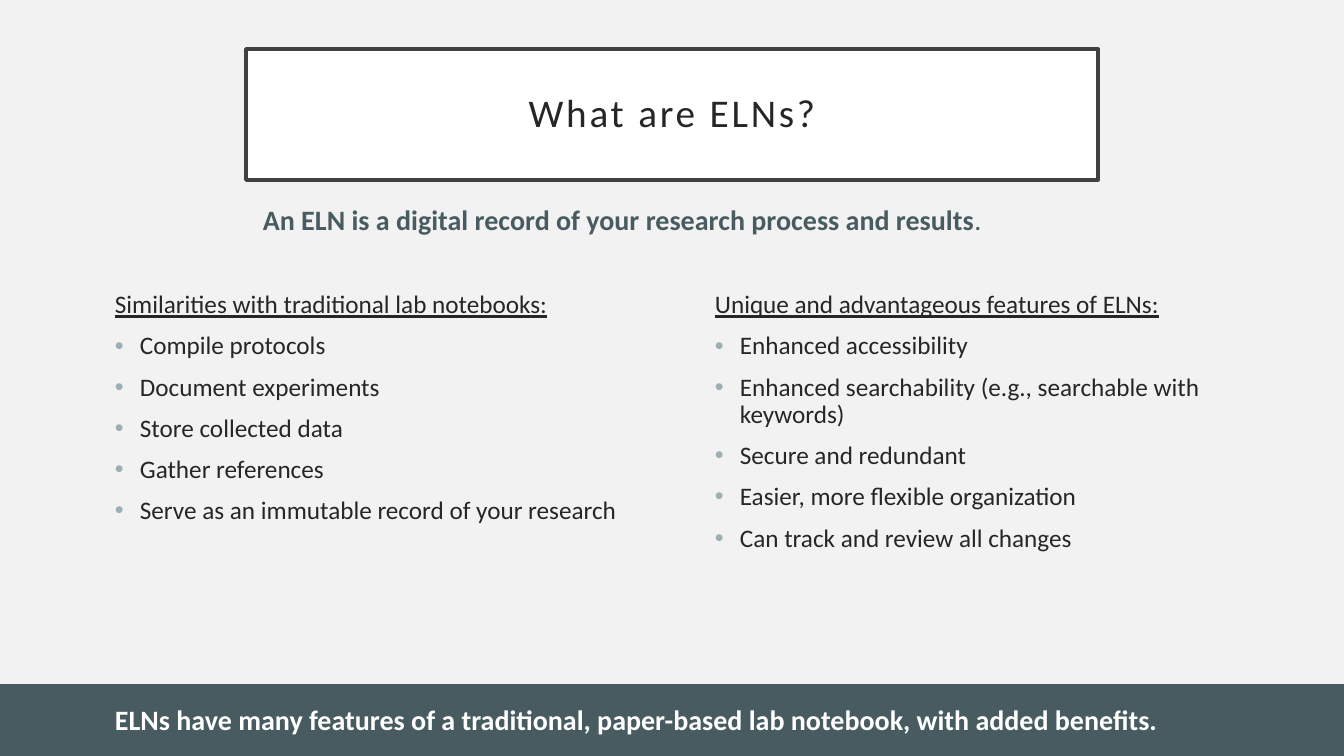
from pptx import Presentation
from pptx.dml.color import RGBColor
from pptx.enum.shapes import MSO_SHAPE
from pptx.enum.text import MSO_ANCHOR, PP_ALIGN
from pptx.oxml.ns import qn
from pptx.util import Emu, Pt
from lxml.etree import SubElement

COLORS = {"background": "F2F2F2", "slate": "475B61", "white": "FFFFFF",
          "frame": "404040", "ink": "262626", "bullet": "9BAFB5"}
SIMILARITIES = ["Compile protocols", "Document experiments", "Store collected data",
                "Gather references", "Serve as an immutable record of your research"]
FEATURES = ["Enhanced accessibility",
            "Enhanced searchability (e.g., searchable with keywords)",
            "Secure and redundant", "Easier, more flexible organization",
            "Can track and review all changes"]


def px(length):
    """Turn pixels at 100.8 to the inch into EMU."""
    return Emu(round(length * 914400 / 100.8))


def color(name):
    """Look up a named colour."""
    return RGBColor.from_string(COLORS[name])


def add_run(paragraph, text, size, ink, **formats):
    """Append a formatted run to a paragraph."""
    run = paragraph.add_run()
    run.text = text
    run.font.color.rgb = color(ink)
    for name, value in {"name": "Calibri", "size": Pt(size), **formats}.items():
        setattr(run.font, name, value)
    return run


def add_panel(slide, box, fill, line, width):
    """Draw a flat rectangle in the box."""
    shape = slide.shapes.add_shape(MSO_SHAPE.RECTANGLE, *map(px, box))
    shape.shadow.inherit = False
    shape.fill.solid()
    shape.fill.fore_color.rgb = color(fill)
    shape.line.color.rgb = color(line)
    shape.line.width = Pt(width)
    return shape


def add_text_frame(slide, box):
    """Add a wrapping text box and return its frame."""
    frame = slide.shapes.add_textbox(*map(px, box)).text_frame
    frame.word_wrap = True
    return frame


def add_title(slide, box, text):
    """Place the framed title."""
    frame = add_panel(slide, box, "white", "frame", 2.5).text_frame
    formats = {"word_wrap": True, "vertical_anchor": MSO_ANCHOR.MIDDLE}
    for side in ("left", "top", "right", "bottom"):
        formats[f"margin_{side}"] = px(20)
    for name, value in formats.items():
        setattr(frame, name, value)
    paragraph = frame.paragraphs[0]
    paragraph.alignment = PP_ALIGN.CENTER
    paragraph.line_spacing = 0.9
    run = add_run(paragraph, text, 28, "ink")
    run.font._element.set("spc", "200")


def add_bullet(paragraph):
    """Give a paragraph a hanging coloured bullet."""
    properties = paragraph._p.get_or_add_pPr()
    properties.set("marL", str(px(25)))
    properties.set("indent", str(-px(25)))
    bullet_color = SubElement(properties, qn("a:buClr"))
    SubElement(bullet_color, qn("a:srgbClr"), val=COLORS["bullet"])
    SubElement(properties, qn("a:buFont"), typeface="Arial")
    SubElement(properties, qn("a:buChar"), char="•")


def add_column(slide, box, heading, items):
    """Place an underlined heading with its bulleted list."""
    frame = add_text_frame(slide, box)
    paragraph = frame.paragraphs[0]
    paragraph.line_spacing = 0.9
    add_run(paragraph, heading, 18, "ink", underline=True)
    for item in items:
        paragraph = frame.add_paragraph()
        paragraph.line_spacing = 0.9
        paragraph.space_before = Pt(10)
        add_bullet(paragraph)
        add_run(paragraph, item, 18, "ink")


def add_statement(slide, box, text, ink, ending=""):
    """Place a bold sentence with an optional regular ending."""
    paragraph = add_text_frame(slide, box).paragraphs[0]
    add_run(paragraph, text, 20, ink, bold=True)
    if ending:
        add_run(paragraph, ending, 20, ink, bold=False)


def add_banner(slide, box, text):
    """Place the bottom band with its sentence."""
    left, top, width, height = box
    add_panel(slide, box, "slate", "slate", 1)
    add_statement(slide, (left + 107, top + 13, width - 159, 44), text, "white")


def main():
    """Build and save the slide."""
    presentation = Presentation()
    presentation.slide_width, presentation.slide_height = px(1344), px(756)
    slide = presentation.slides.add_slide(presentation.slide_layouts[6])
    slide.background.fill.solid()
    slide.background.fill.fore_color.rgb = color("background")
    add_banner(slide, (-2, 685, 1347, 76),
               "ELNs have many features of a traditional, paper-based lab notebook, "
               "with added benefits.")
    columns = [("Similarities with traditional lab notebooks:", SIMILARITIES),
               ("Unique and advantageous features of ELNs:", FEATURES)]
    for index, (heading, items) in enumerate(columns):
        add_column(slide, (105 + 600 * index, 287, 546, 286), heading, items)
    add_title(slide, (246, 49, 852, 131), "What are ELNs?")
    add_statement(slide, (253, 198, 845, 44),
                  "An ELN is a digital record of your research process and results",
                  "slate", ".")
    presentation.save("out.pptx")


if __name__ == "__main__":
    main()
